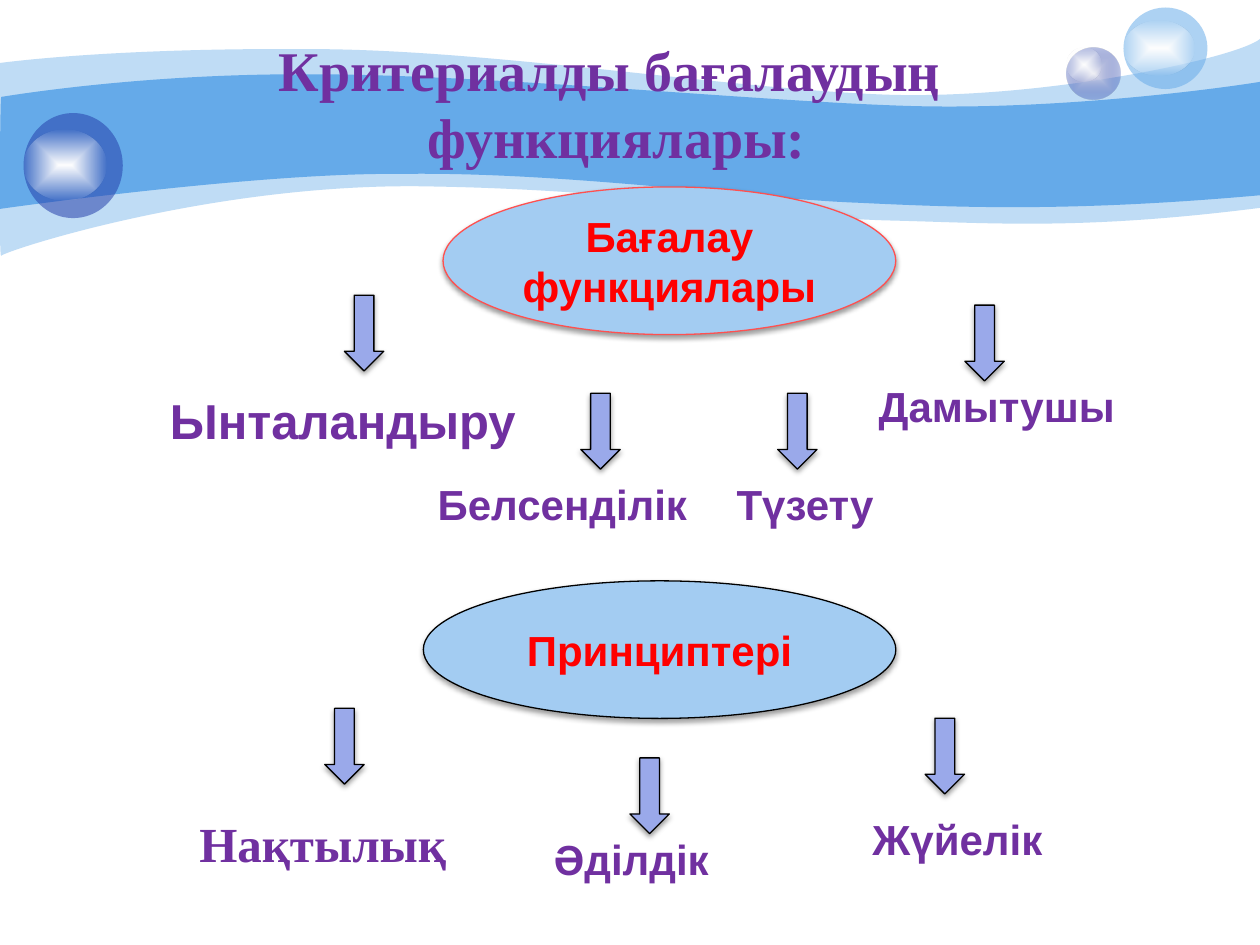
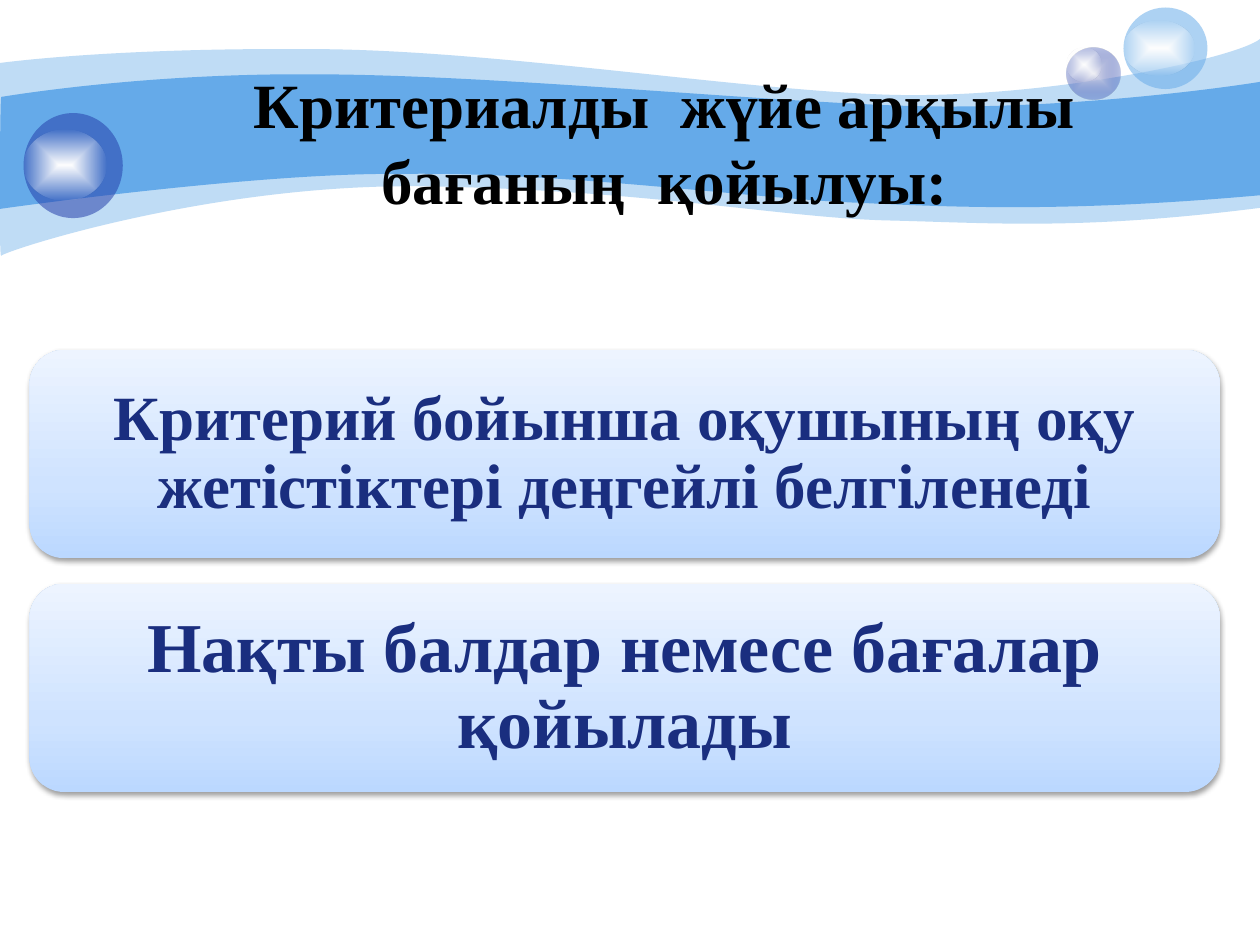
"""Builds two slides about the functions and marks of criteria-based assessment."""
from lxml import etree
from pptx import Presentation
from pptx.dml.color import RGBColor
from pptx.enum.shapes import MSO_SHAPE
from pptx.enum.text import MSO_ANCHOR, MSO_AUTO_SIZE, PP_ALIGN
from pptx.oxml.ns import qn
from pptx.util import Pt

ELLIPSE, ARROW, ROUNDED = MSO_SHAPE.OVAL, MSO_SHAPE.DOWN_ARROW, MSO_SHAPE.ROUNDED_RECTANGLE
CENTER, LEFT = PP_ALIGN.CENTER, PP_ALIGN.LEFT
TOP, MIDDLE = MSO_ANCHOR.TOP, MSO_ANCHOR.MIDDLE
NO_FIT = MSO_AUTO_SIZE.NONE

SANS, SERIF = "Arial", "Times New Roman"
SKY, NAVY, WHITE, BLACK = "65AAE9", "233DA9", "FFFFFF", "000000"
PURPLE, RED, INK = "7030A0", "FF0000", "1A2E7F"
OVAL_FILL, ARROW_FILL, CORAL = "A3CCF2", "9AA9EA", "FF5050"
NS = "http://schemas.openxmlformats.org/drawingml/2006/main"

RADIAL = '<a:path path="shape"><a:fillToRect l="50000" t="50000" r="50000" b="50000"/></a:path>'
UPWARD = '<a:lin ang="16200000" scaled="0"/>'
GLOW = [(0, WHITE, 100), (100, WHITE, 0)]
PANEL = [(0, "BBD8FF", 100), (35, "CFE3FF", 100), (100, "EDF4FF", 100)]

BACK_WAVE = (0, 36), [
    (17.3, 33.8, 77, 27.4, 177.8, 28.1), (277.9, 28.1, 414, 50.4, 503.3, 54),
    (591.8, 57.6, 705.6, 33.8, 720, 22.3), (720, 118.8),
    (617.8, 131.8, 566.6, 127.4, 507.6, 126), (447.8, 124.6, 370.8, 108.7, 247, 106.6),
    (123.8, 103.7, 2.9, 143.3, 0.7, 146.2), (-0.7, 149.8, 0, 54, 0, 36)]
FRONT_WAVE = (0.7, 55.4), [
    (1.4, 55.4, 79.2, 41.8, 178.6, 42.5), (277.9, 42.5, 428.4, 57.6, 517, 60.5),
    (605.5, 63.4, 702.7, 49.7, 720, 46.8), (720, 111.6),
    (614.2, 121, 550.8, 118.8, 491, 115.9), (431.3, 113.8, 321.8, 97.9, 228.2, 99.4),
    (146.2, 98.6, -1.4, 119.5, -0.7, 119.5), (0, 119.5, 0, 55.4, 0.7, 55.4)]

ARROWS = [(196.8, 168.7), (331.9, 224.8), (444.4, 224.8), (551.4, 174.4),
          (185.6, 404.8), (360, 433.1), (528.7, 410.4)]
LABELS = [("Ынталандыру", 90, 219.5, 231, 28, SANS), ("Белсенділік", 243, 270, 162, 24, SANS),
          ("Түзету", 413.8, 270, 120, 24, SANS), ("Әділдік", 309.5, 472.5, 128, 24, SANS),
          ("Нақтылық", 106.8, 461.5, 184, 28, SERIF), ("Дамытушы", 495, 214, 158, 24, SANS),
          ("Жүйелік", 491.5, 461.5, 133, 24, SANS)]


def rgb(value):
    """Turn a hex string into a colour."""
    return RGBColor.from_string(value)


def xml(text):
    """Parse one DrawingML element."""
    return etree.fromstring(text.replace(">", f' xmlns:a="{NS}">', 1))


def paint(sp, color, line=None):
    """Give a shape a plain fill and a thin line or none."""
    sp.shadow.inherit = False
    sp.fill.solid()
    sp.fill.fore_color.rgb = rgb(color)
    if line:
        sp.line.color.rgb = rgb(line)
        sp.line.width = Pt(0.75)
    else:
        sp.line.fill.background()


def fade(sp, percent):
    """Set the opacity of a plain fill."""
    color = sp.element.spPr.find(qn("a:solidFill")).find(qn("a:srgbClr"))
    etree.SubElement(color, qn("a:alpha"), val=str(percent * 1000))


def blend(sp, stops, direction):
    """Replace the fill of a shape with a gradient."""
    marks = "".join(
        f'<a:gs pos="{pos * 1000}"><a:srgbClr val="{color}">'
        f'<a:alpha val="{alpha * 1000}"/></a:srgbClr></a:gs>' for pos, color, alpha in stops)
    pr = sp.element.spPr
    pr.replace(pr.find(qn("a:solidFill")),
               xml(f'<a:gradFill rotWithShape="1"><a:gsLst>{marks}</a:gsLst>{direction}</a:gradFill>'))


def cast_shadow(sp):
    """Add a soft shadow below a shape."""
    sp.element.spPr.find(qn("a:effectLst")).append(xml(
        '<a:outerShdw blurRad="39400" dist="20300" dir="5400000" rotWithShape="0">'
        '<a:srgbClr val="000000"><a:alpha val="38000"/></a:srgbClr></a:outerShdw>'))


def add_shape(slide, kind, box, color, line=None):
    """Add a painted preset shape."""
    sp = slide.shapes.add_shape(kind, *map(Pt, box))
    paint(sp, color, line)
    return sp


def write(sp, lines, size, color, font=SERIF, align=CENTER, anchor=MIDDLE, inset=None, spacing=None):
    """Write bold paragraphs into a shape."""
    tf = sp.text_frame
    frame = {"word_wrap": True, "auto_size": NO_FIT, "vertical_anchor": anchor}
    if inset:
        frame.update({f"margin_{side}": Pt(inset) for side in ("left", "top", "right", "bottom")})
    for name, value in frame.items():
        setattr(tf, name, value)
    tf.text = "\n".join(lines)
    for p in tf.paragraphs:
        p.alignment, p.line_spacing = align, spacing
        for r in p.runs:
            for name, value in {"name": font, "size": Pt(size), "bold": True}.items():
                setattr(r.font, name, value)
            r.font.color.rgb = rgb(color)


def add_title(slide, lines, box, size, color):
    """Place and fill the title placeholder."""
    sp = slide.shapes.title
    sp.left, sp.top, sp.width, sp.height = map(Pt, box)
    write(sp, lines, size, color, anchor=TOP)


def add_label(slide, text, left, top, width, size, font):
    """Add a one-line purple label."""
    sp = slide.shapes.add_textbox(Pt(left), Pt(top), Pt(width), Pt(size * 1.2 + 8))
    write(sp, [text], size, PURPLE, font, LEFT, TOP)


def add_oval(slide, text, box, line):
    """Add a heading oval with red text."""
    sp = add_shape(slide, ELLIPSE, box, OVAL_FILL, line)
    cast_shadow(sp)
    write(sp, [text], 24, RED, SANS)


def add_panel(slide, text, top, size, inset):
    """Add a wide rounded panel with a gradient."""
    sp = add_shape(slide, ROUNDED, (16.9, top, 680.2, 119), WHITE)
    blend(sp, PANEL, UPWARD)
    cast_shadow(sp)
    write(sp, [text], size, INK, inset=inset, spacing=0.9)


def add_wave(slide, start, segments):
    """Add a wavy band, turning each run of three points into a cubic curve."""
    points = [(Pt(x), Pt(y)) for seg in segments for x, y in zip(seg[::2], seg[1::2])]
    builder = slide.shapes.build_freeform(*map(Pt, start))
    builder.add_line_segments(points)
    sp = builder.convert_to_shape()
    steps = iter(list(sp.element.iter(qn("a:lnTo"))))
    for seg in segments:
        first = next(steps)
        if len(seg) == 6:
            curve = etree.Element(qn("a:cubicBezTo"))
            first.getparent().replace(first, curve)
            for step in (first, next(steps), next(steps)):
                curve.append(step[0])
                if step is not first:
                    step.getparent().remove(step)
    paint(sp, SKY)
    return sp


def add_bubble(slide, box, shine, color, alpha):
    """Add a translucent ball with a highlight."""
    ball = add_shape(slide, ELLIPSE, box, color)
    fade(ball, alpha)
    light = add_shape(slide, ELLIPSE, shine, WHITE)
    blend(light, GLOW, RADIAL)
    return [ball, light]


def decorate_master(prs, slide):
    """Draw the waves and bubbles and move them to the master."""
    back = add_wave(slide, *BACK_WAVE)
    fade(back, 41)
    front = add_wave(slide, *FRONT_WAVE)
    small = add_bubble(slide, (609.5, 27, 30.8, 29.5), (609.5, 27, 20, 19.5), NAVY, 31)
    blend(small[0], [(0, "E1E2ED", 100), (100, NAVY, 31)], RADIAL)
    large = add_bubble(slide, (642, 4.3, 48, 46.6), (642, 12, 40.3, 31), SKY, 53)
    left = add_bubble(slide, (13.5, 64.6, 56.7, 60), (13.5, 74.3, 47.4, 40.3), NAVY, 53)
    tree = prs.slide_master.shapes.element
    for i, sp in enumerate([back, front, *small, *large, *left]):
        sp.element.xpath(".//p:cNvPr")[0].set("id", str(20 + i))
        tree.insert(2 + i, sp.element)


def fill_functions(slide):
    """Build the slide of functions and principles."""
    add_title(slide, ["Критериалды бағалаудың ", "функциялары:"], (45, 16.5, 615, 85), 32, PURPLE)
    add_oval(slide, "Бағалау функциялары", (253.2, 106.8, 258.7, 84.4), CORAL)
    add_oval(slide, "Принциптері", (241.9, 331.9, 270, 78.6), BLACK)
    for left, top in ARROWS:
        cast_shadow(add_shape(slide, ARROW, (left, top, 22.5, 43.3), ARROW_FILL, BLACK))
    for label in LABELS:
        add_label(slide, *label)


def fill_marks(slide):
    """Build the slide on how marks are given."""
    add_title(slide, ["Критериалды  жүйе арқылы бағаның  қойылуы:"], (84.4, 33.8, 590.5, 94.5), 36, BLACK)
    add_panel(slide, "Критерий бойынша оқушының оқу жетістіктері деңгейлі белгіленеді", 200, 36, 11)
    add_panel(slide, "Нақты балдар немесе бағалар қойылады", 333.6, 40, 12)


def main():
    """Create the presentation."""
    prs = Presentation()
    prs.slide_width, prs.slide_height = Pt(720), Pt(540)
    layout = prs.slide_layouts[5]
    functions, marks = (prs.slides.add_slide(layout) for _ in range(2))
    decorate_master(prs, functions)
    fill_functions(functions)
    fill_marks(marks)
    prs.save("out.pptx")


if __name__ == "__main__":
    main()
